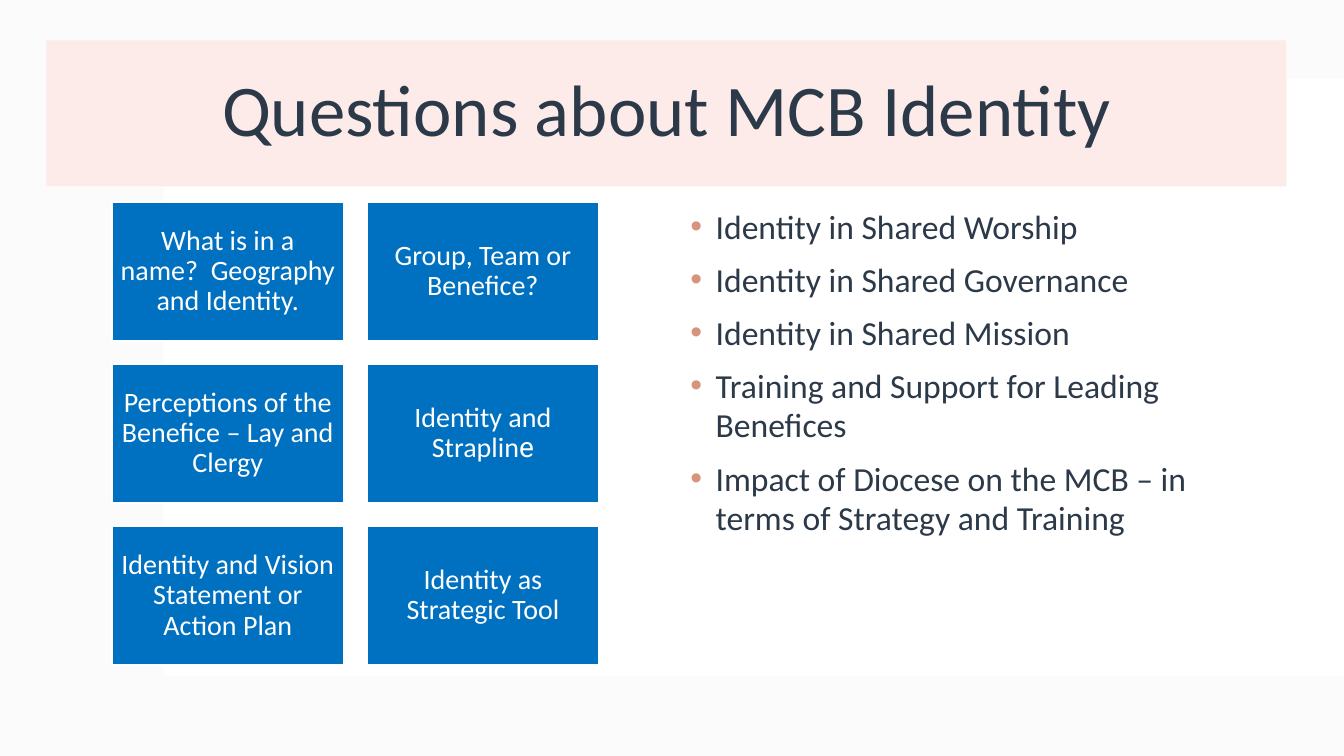
from lxml import etree
from pptx import Presentation
from pptx.dml.color import RGBColor
from pptx.enum.shapes import MSO_SHAPE
from pptx.enum.text import MSO_ANCHOR, PP_ALIGN
from pptx.oxml.ns import qn
from pptx.util import Inches, Pt

RECT = MSO_SHAPE.RECTANGLE
MIDDLE, TOP = MSO_ANCHOR.MIDDLE, MSO_ANCHOR.TOP
CENTER, LEFT = PP_ALIGN.CENTER, PP_ALIGN.LEFT
NAVY, BLUE, WHITE, PINK, CORAL, GREY = (
    "2C3948", "0070C0", "FFFFFF", "FDEBE9", "D6947C", "F4F4F4")

TOPICS = [
    ["What is in a name?  Geography and Identity."],
    ["Group, Team or Benefice?"],
    ["Perceptions of the Benefice – Lay and Clergy"],
    ["Identity and Straplin", ("e", "Roboto")],
    ["Identity and Vision Statement or Action Plan"],
    ["Identity as Strategic Tool"],
]
POINTS = [
    "Identity in Shared Worship",
    "Identity in Shared Governance",
    "Identity in Shared Mission",
    "Training and Support for Leading Benefices",
    "Impact of Diocese on the MCB – in terms of Strategy and Training",
]


def rgb(value):
    return RGBColor.from_string(value)


def add_rect(slide, left, top, width, height, fill, line=None, alpha=None):
    sp = slide.shapes.add_shape(RECT, Inches(left), Inches(top), Inches(width), Inches(height))
    sp.shadow.inherit = False
    sp.fill.solid()
    sp.fill.fore_color.rgb = rgb(fill)
    if alpha:
        color = sp.fill._xPr.find(".//" + qn("a:srgbClr"))
        etree.SubElement(color, qn("a:alpha"), val=str(alpha * 1000))
    if line:
        sp.line.color.rgb = rgb(line)
        sp.line.width = Pt(1.5)
    else:
        sp.line.fill.background()
    return sp


def add_bullet(p):
    pPr = p._p.get_or_add_pPr()
    pPr.set("marL", str(Inches(0.25)))
    pPr.set("indent", str(-Inches(0.25)))
    color = etree.SubElement(pPr, qn("a:buClr"))
    etree.SubElement(color, qn("a:srgbClr"), val=CORAL)
    etree.SubElement(pPr, qn("a:buFont"), typeface="Arial")
    etree.SubElement(pPr, qn("a:buChar"), char="•")


def write_text(sp, paragraphs, size, color=NAVY, align=CENTER, anchor=MIDDLE,
               spacing=0.9, before=0, inset=None, bullet=False):
    tf = sp.text_frame
    tf.word_wrap = True
    tf.vertical_anchor = anchor
    if inset is not None:
        tf.margin_left = tf.margin_right = tf.margin_top = tf.margin_bottom = Inches(inset)
    for i, runs in enumerate(paragraphs):
        p = tf.paragraphs[0] if i == 0 else tf.add_paragraph()
        if bullet:
            add_bullet(p)
        p.alignment = align
        p.line_spacing = spacing
        p.space_before = Pt(before if i else 0)
        for run in runs:
            text, font = (run, "Calibri") if isinstance(run, str) else run
            r = p.add_run()
            r.text = text
            r.font.name = font
            r.font.size = Pt(size)
            r.font.color.rgb = rgb(color)


def add_topics(slide):
    for i, runs in enumerate(TOPICS):
        row, col = divmod(i, 2)
        sp = add_rect(slide, 1.11 + col * 2.53, 2 + row * 1.61, 2.3, 1.38, BLUE, line=WHITE)
        write_text(sp, [runs], 20, color=WHITE, inset=0.08)


def add_points(slide):
    sp = slide.shapes.add_textbox(Inches(6.75), Inches(2), Inches(5.24), Inches(4.6))
    write_text(sp, [[point] for point in POINTS], 24, align=LEFT, anchor=TOP,
               spacing=Pt(28), before=10, bullet=True)


def main():
    prs = Presentation()
    prs.slide_width, prs.slide_height = Inches(13.33), Inches(7.5)
    slide = prs.slides.add_slide(prs.slide_layouts[6])
    add_rect(slide, 0, 0, 13.33, 7.5, GREY, alpha=35)
    add_rect(slide, 1.62, 0.78, 11.71, 5.93, WHITE)
    title = add_rect(slide, 0.46, 0.4, 12.3, 1.45, PINK)
    write_text(title, [["Questions about MCB Identity"]], 52)
    add_topics(slide)
    add_points(slide)
    prs.save("out.pptx")


if __name__ == "__main__":
    main()
